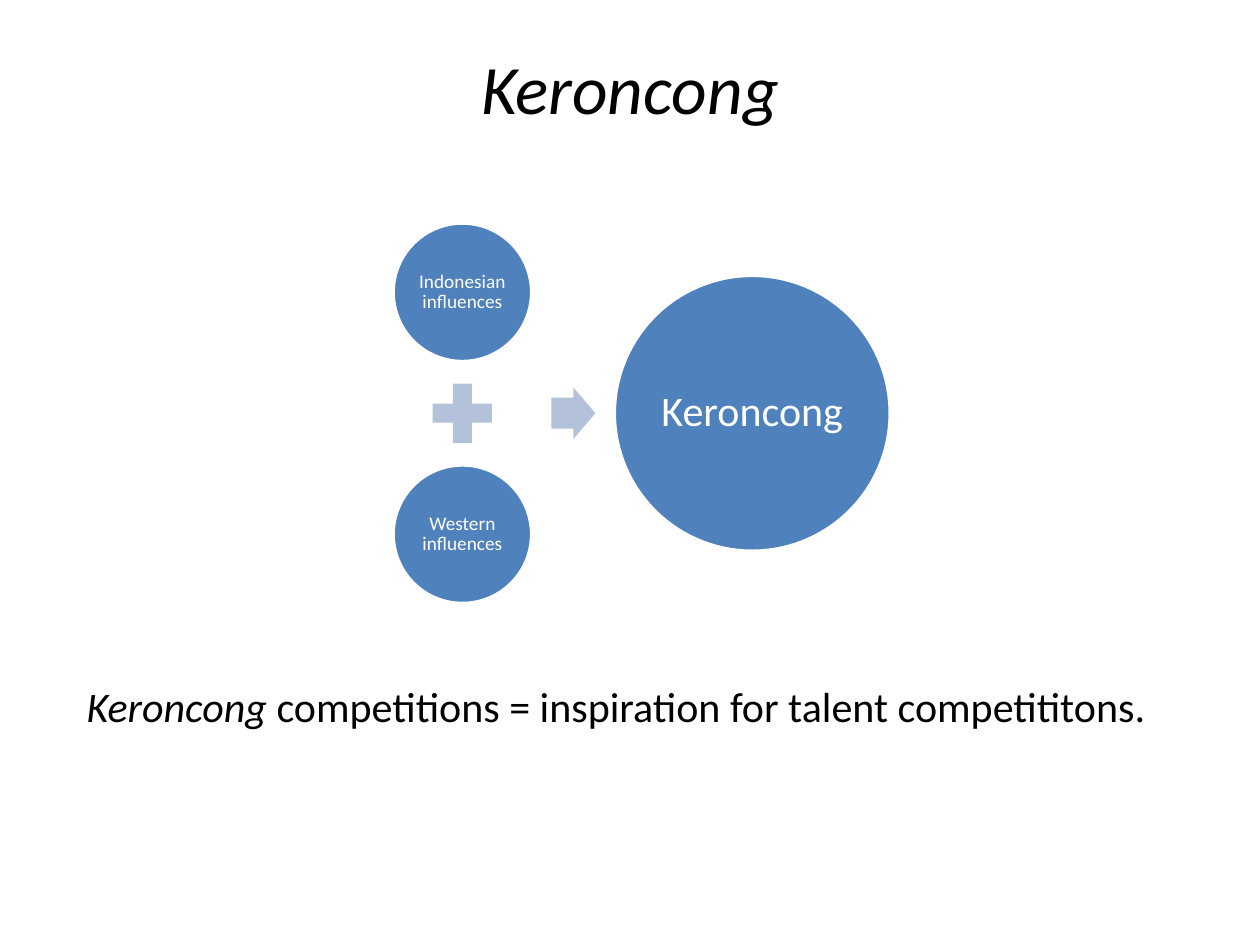
"""Build the Keroncong slide: two influences combining into one music style."""
from pptx import Presentation
from pptx.dml.color import RGBColor
from pptx.enum.shapes import MSO_SHAPE
from pptx.enum.text import MSO_ANCHOR, PP_ALIGN
from pptx.util import Inches, Pt

CIRCLE, PLUS, ARROW = MSO_SHAPE.OVAL, MSO_SHAPE.MATH_PLUS, MSO_SHAPE.RIGHT_ARROW
CENTER, LEFT = PP_ALIGN.CENTER, PP_ALIGN.LEFT
MIDDLE, TOP = MSO_ANCHOR.MIDDLE, MSO_ANCHOR.TOP

FONT = "Calibri"
BLUE, PALE_BLUE, WHITE, BLACK = "4F81BD", "B3C1DB", "FFFFFF", "000000"

TITLE = [("Keroncong", True)]
INFLUENCES = ["Indonesian influences", "Western influences"]
RESULT = "Keroncong"
CONCLUSION = [("Keroncong ", True), ("competitions = inspiration for talent competititons.", False)]

MID_Y = 3.28
INFLUENCE_X, ARROW_X, RESULT_X = 3.67, 4.55, 5.97
INFLUENCE_SIZE, PLUS_SIZE, RESULT_SIZE = 1.1, 0.64, 2.19
INFLUENCE_OFFSET = 0.96


def color(hex_code):
    return RGBColor.from_string(hex_code)


def place(part, left, top, width, height):
    part.left, part.top = Inches(left), Inches(top)
    part.width, part.height = Inches(width), Inches(height)


def write(part, pieces, size, font_color, align, anchor):
    frame = part.text_frame
    frame.word_wrap = True
    frame.vertical_anchor = anchor
    paragraph = frame.paragraphs[0]
    paragraph.alignment = align
    for words, italic in pieces:
        run = paragraph.add_run()
        run.text = words
        run.font.name = FONT
        run.font.size = Pt(size)
        run.font.italic = italic
        run.font.color.rgb = color(font_color)
    return frame


def add_symbol(slide, kind, center_x, center_y, width, height, fill):
    symbol = slide.shapes.add_shape(
        kind, Inches(center_x - width / 2), Inches(center_y - height / 2),
        Inches(width), Inches(height))
    symbol.shadow.inherit = False
    symbol.fill.solid()
    symbol.fill.fore_color.rgb = color(fill)
    symbol.line.fill.background()
    return symbol


def add_circle(slide, label, center_x, center_y, diameter, size, inset):
    circle = add_symbol(slide, CIRCLE, center_x, center_y, diameter, diameter, BLUE)
    circle.line.color.rgb = color(WHITE)
    circle.line.width = Pt(2)
    frame = write(circle, [(label, False)], size, WHITE, CENTER, MIDDLE)
    frame.margin_left = frame.margin_right = Inches(inset)
    frame.margin_top = frame.margin_bottom = Inches(inset)
    frame.paragraphs[0].line_spacing = 0.9


def main():
    deck = Presentation()
    deck.slide_width, deck.slide_height = Inches(10), Inches(7.5)
    slide = deck.slides.add_slide(deck.slide_layouts[5])

    title = slide.shapes.title
    place(title, 0.5, 0.3, 9, 0.77)
    write(title, TITLE, 39.6, BLACK, CENTER, MIDDLE)

    conclusion = slide.shapes.add_textbox(Inches(0.59), Inches(5.35), Inches(9), Inches(0.51))
    write(conclusion, CONCLUSION, 24, BLACK, LEFT, TOP)

    for side, influence in zip((-1, 1), INFLUENCES):
        add_circle(slide, influence, INFLUENCE_X, MID_Y + side * INFLUENCE_OFFSET,
                   INFLUENCE_SIZE, 11, 0.02)
    add_symbol(slide, PLUS, INFLUENCE_X, MID_Y, PLUS_SIZE, PLUS_SIZE, PALE_BLUE)
    arrow = add_symbol(slide, ARROW, ARROW_X, MID_Y, 0.35, 0.41, PALE_BLUE)
    arrow.adjustments[0] = 0.6
    add_circle(slide, RESULT, RESULT_X, MID_Y, RESULT_SIZE, 24, 0.03)

    deck.save("out.pptx")


if __name__ == "__main__":
    main()
